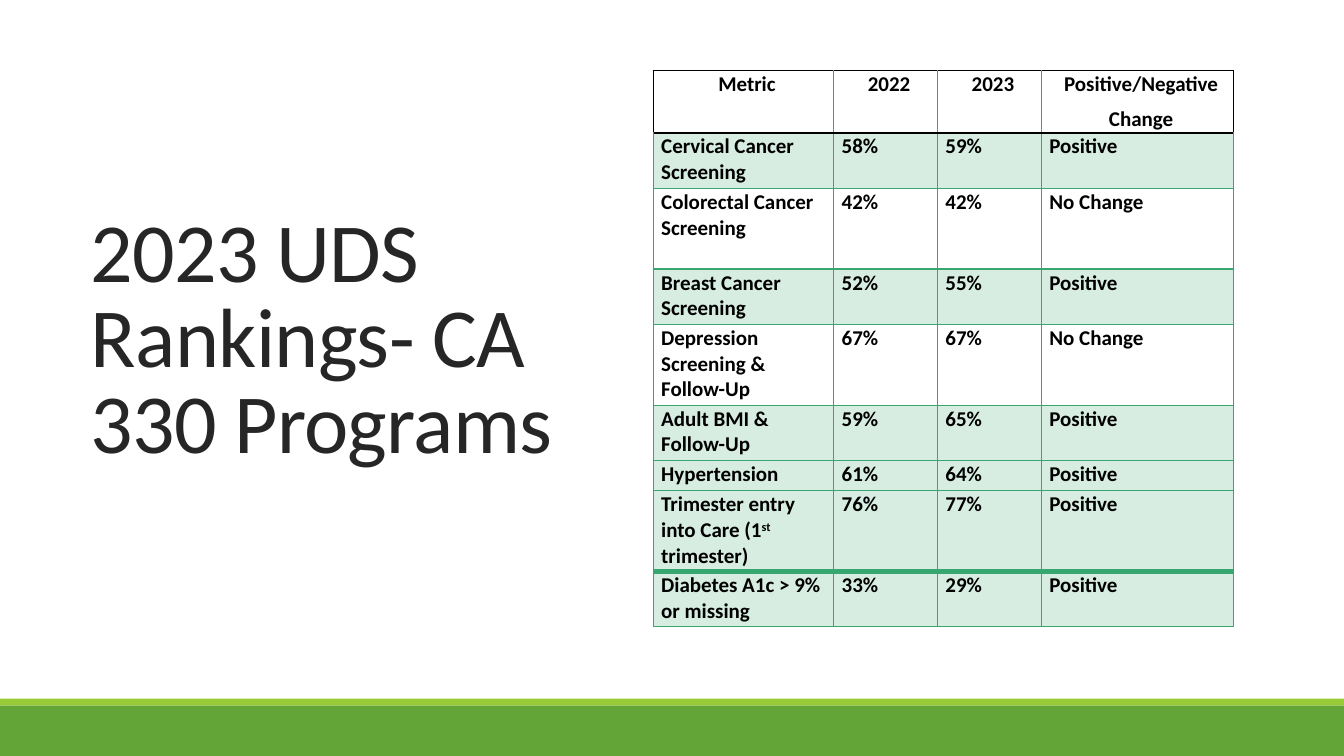
from pptx import Presentation
from pptx.dml.color import RGBColor
from pptx.enum.shapes import MSO_SHAPE as Shape
from pptx.enum.text import MSO_ANCHOR as Anchor, PP_ALIGN as Align
from pptx.oxml.ns import qn
from pptx.util import Pt
from lxml.etree import Element, SubElement

GREEN, BLACK, MINT, WHITE = "37A76F", "000000", "D7EDE2", "FFFFFF"


def color(value):
    return RGBColor.from_string(value)


def set_borders(cell, borders):
    """Set (colour, width in points) for the left, right, top and bottom edges."""
    properties = cell._tc.get_or_add_tcPr()
    for position, (side, (tone, width)) in enumerate(zip("LRTB", borders)):
        line = Element(qn(f"a:ln{side}"), w=str(Pt(width)))
        SubElement(SubElement(line, qn("a:solidFill")), qn("a:srgbClr"), val=tone)
        properties.insert(position, line)


deck = Presentation()
deck.slide_width, deck.slide_height = Pt(960), Pt(540)
page = deck.slides.add_slide(deck.slide_layouts[5])

# Title
title = page.shapes.title
title.left, title.top, title.width, title.height = Pt(57.6), Pt(49.7), Pt(378.7), Pt(290.2)
title.text_frame.word_wrap = True
title.text_frame.vertical_anchor = Anchor.BOTTOM
para = title.text_frame.paragraphs[0]
para.alignment = Align.LEFT
para.line_spacing = 0.85
span = para.add_run()
span.text = "2023 UDS Rankings- CA 330 Programs"
span.font.size = Pt(60)
span.font.name = "Calibri"
span.font.color.rgb = color("262626")
span.font._element.set("spc", "-50")

# Footer bands
for top, height, tone in [(499, 5, "99CB38"), (504, 36, "63A537")]:
    band = page.shapes.add_shape(Shape.RECTANGLE, 0, Pt(top), deck.slide_width, Pt(height))
    band.shadow.inherit = False
    band.fill.solid()
    band.fill.fore_color.rgb = color(tone)
    band.line.fill.background()

# Rankings table; ^ encloses superscript text
rankings = [
    ("Metric", "2022", "2023", "Positive/Negative\nChange"),
    ("Cervical Cancer Screening", "58%", "59%", "Positive"),
    ("Colorectal Cancer Screening", "42%", "42%", "No Change"),
    ("Breast Cancer Screening", "52%", "55%", "Positive"),
    ("Depression Screening & Follow-Up", "67%", "67%", "No Change"),
    ("Adult BMI & Follow-Up", "59%", "65%", "Positive"),
    ("Hypertension", "61%", "64%", "Positive"),
    ("Trimester entry into Care (1^st^ trimester)", "76%", "77%", "Positive"),
    ("Diabetes A1c > 9% or missing", "33%", "29%", "Positive"),
]
column_widths = [128.9, 74.2, 74.2, 137.5]
row_heights = [44.6, 39.6, 57.6, 39.6, 57.6, 39.6, 21.6, 57.6, 39.6]
last_row, last_column = len(rankings) - 1, len(column_widths) - 1

# Horizontal rules from the top edge to the bottom edge
rules = [(GREEN, 1)] * (len(rankings) + 1)
rules[0] = rules[1] = (BLACK, 1)
rules[last_row] = (GREEN, 4)

table = page.shapes.add_table(len(rankings), len(column_widths), Pt(466.6), Pt(50.4),
                              Pt(sum(column_widths)), Pt(sum(row_heights))).table
table.first_row = False
table.horz_banding = False
for column, width in zip(table.columns, column_widths):
    column.width = Pt(width)

for row_index, (row, height) in enumerate(zip(rankings, row_heights)):
    table.rows[row_index].height = Pt(height)
    is_header = row_index == 0
    plain = is_header or row[-1] == "No Change"
    for column_index, words in enumerate(row):
        cell = table.cell(row_index, column_index)
        cell.margin_left = cell.margin_right = cell.margin_top = Pt(0.7)
        cell.margin_bottom = 0
        cell.fill.solid()
        cell.fill.fore_color.rgb = color(WHITE if plain else MINT)
        left = BLACK if is_header and column_index == 0 else GREEN
        right = BLACK if is_header and column_index == last_column else GREEN
        set_borders(cell, [(left, 1), (right, 1), rules[row_index], rules[row_index + 1]])

        for line_index, line_words in enumerate(words.split("\n")):
            frame = cell.text_frame
            para = frame.add_paragraph() if line_index else frame.paragraphs[0]
            para.alignment = Align.CENTER if is_header else Align.LEFT
            para.space_before = Pt(6.3 if line_index else 0.7)
            para._p.get_or_add_pPr().set("marL", str(Pt(5)))
            for part_index, part in enumerate(line_words.split("^")):
                span = para.add_run()
                span.text = part
                span.font.size = Pt(15)
                span.font.name = "Calibri"
                span.font.bold = True
                span.font.color.rgb = color(BLACK)
                if part_index % 2:
                    span.font._element.set("baseline", "30000")

deck.save("out.pptx")
